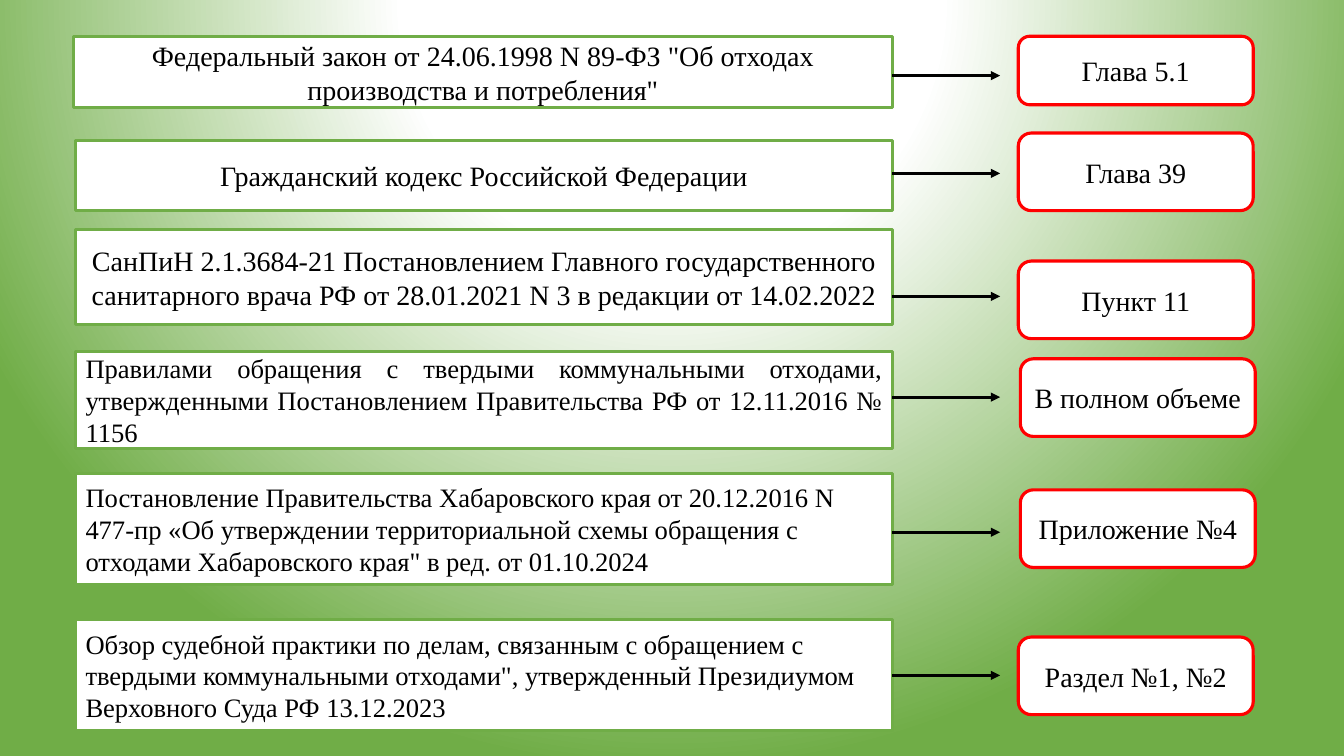
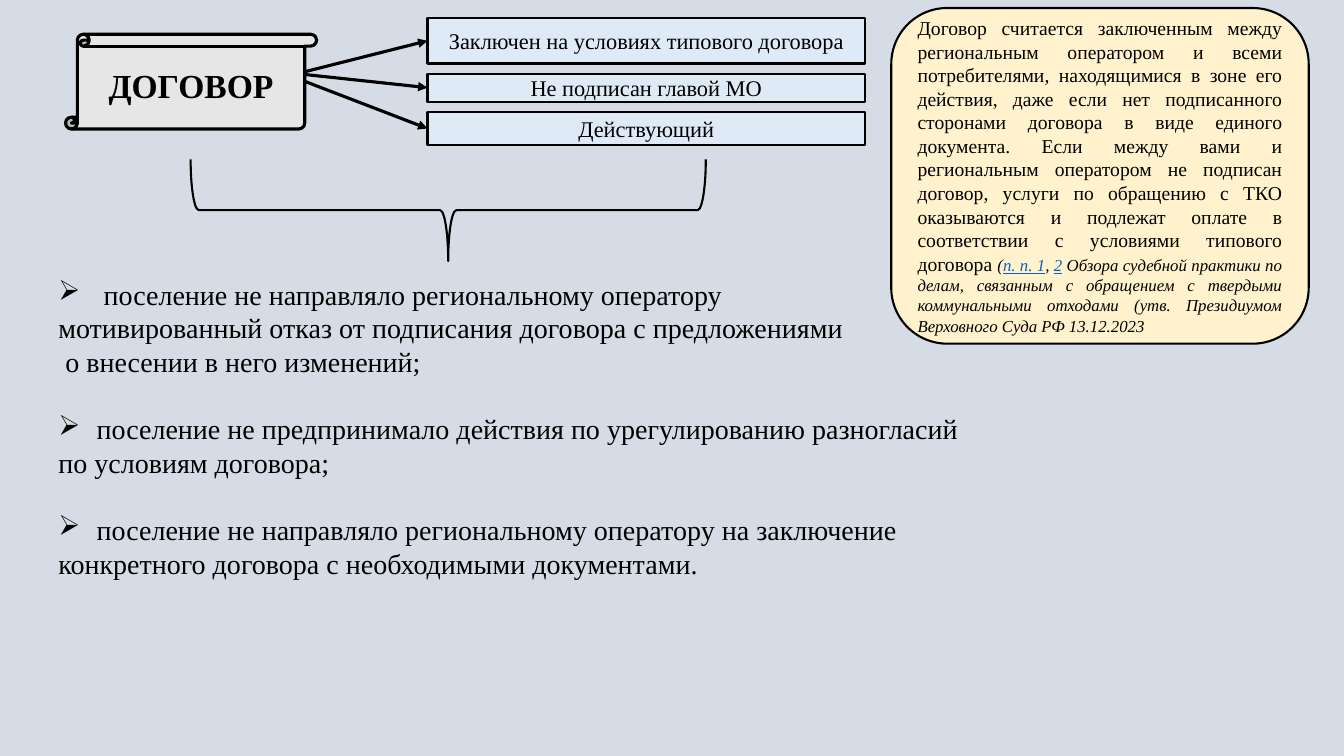
import dataclasses

import lxml.etree
import pptx
import pptx.dml.color
import pptx.enum.shapes
import pptx.enum.text
import pptx.oxml
import pptx.oxml.ns
import pptx.util

Inches = pptx.util.Inches
Shape = pptx.enum.shapes.MSO_SHAPE
Align = pptx.enum.text.PP_ALIGN


@dataclasses.dataclass(frozen=True)
class Theme:
    font: str = "Times New Roman"
    black: str = "000000"
    white: str = "FFFFFF"
    green: str = "70AD47"
    red: str = "FF0000"
    slate: str = "D6DCE5"
    gray: str = "E7E6E6"
    blue: str = "DEEBF7"
    cream: str = "FFF2CC"
    link: str = "0563C1"
    heading: int = 24
    body: int = 20
    dense: int = 19
    label: int = 16
    note: int = 14
    citation: int = 12
    thick: float = 2.25
    thin: float = 1.5
    paragraph_gap: int = 24


THEME = Theme()

LAW_RIGHT = 8.85
ARROW_RIGHT = 9.92
REFERENCE_WIDTH = 2.33

LAWS = [
    ('Федеральный закон от 24.06.1998 N 89-ФЗ "Об отходах производства и потребления"',
     (0.73, 0.36, 0.71), THEME.body, Align.CENTER, 0.75, "Глава 5.1", (10.1, 0.36, 0.68)),
    ("Гражданский кодекс Российской Федерации",
     (0.75, 1.39, 0.7), THEME.body, Align.CENTER, 1.72, "Глава 39", (10.1, 1.32, 0.77)),
    ("СанПиН 2.1.3684-21 Постановлением Главного государственного санитарного врача РФ "
     "от 28.01.2021 N 3 в редакции от 14.02.2022",
     (0.75, 2.28, 0.94), THEME.body, Align.CENTER, 2.94, "Пункт 11", (10.1, 2.59, 0.77)),
    ("Правилами обращения с твердыми коммунальными отходами, утвержденными "
     "Постановлением Правительства РФ от 12.11.2016 № 1156",
     (0.75, 3.49, 0.96), THEME.dense, Align.JUSTIFY, 3.94, "В полном объеме", (10.12, 3.56, 0.77)),
    ("Постановление Правительства Хабаровского края от 20.12.2016 N 477-пр «Об утверждении "
     'территориальной схемы обращения с отходами Хабаровского края" в ред. от 01.10.2024',
     (0.75, 4.7, 1.1), THEME.dense, Align.LEFT, 5.28, "Приложение №4", (10.12, 4.86, 0.77)),
    ("Обзор судебной практики по делам, связанным с обращением с твердыми коммунальными "
     'отходами", утвержденный Президиумом Верховного Суда РФ 13.12.2023',
     (0.75, 6.15, 1.1), THEME.dense, Align.LEFT, 6.7, "Раздел №1, №2", (10.1, 6.32, 0.77)),
]

CONTRACT_STATES = [
    ("Заключен на условиях типового договора", 0.18, 0.45, 0.71),
    ("Не подписан главой МО", 0.73, 0.28, 0.74),
    ("Действующий", 1.11, 0.33, 0.81),
]

CONDITIONS = [
    [" поселение не направляло региональному оператору",
     "мотивированный отказ от подписания договора с предложениями",
     " о внесении в него изменений;"],
    ["поселение не предпринимало действия по урегулированию разногласий",
     "по условиям договора;"],
    ["поселение не направляло региональному оператору на заключение",
     "конкретного договора с необходимыми документами."],
]

EXPLANATION = (
    "Договор считается заключенным между региональным оператором и всеми потребителями, "
    "находящимися в зоне его действия, даже если нет подписанного сторонами договора в виде "
    "единого документа. Если между вами и региональным оператором не подписан договор, услуги "
    "по обращению с ТКО оказываются и подлежат оплате в соответствии с условиями типового договора "
)
CITATION = [
    ("(", False),
    ("п. п. 1", True),
    (", ", False),
    ("2", True),
    (" Обзора судебной практики по делам, связанным с обращением с твердыми коммунальными "
     "отходами (утв. Президиумом Верховного Суда РФ 13.12.2023", False),
]


def rgb(color):
    return pptx.dml.color.RGBColor.from_string(color)


def add_run(paragraph, text, size, color=THEME.black, bold=None, italic=None, underline=None):
    run = paragraph.add_run()
    run.text = text
    font = run.font
    font.name, font.size = THEME.font, pptx.util.Pt(size)
    font.color.rgb = rgb(color)
    font.bold, font.italic, font.underline = bold, italic, underline


def add_outline(slide, kind, box, line, width, fill=None):
    shape = slide.shapes.add_shape(kind, *map(Inches, box))
    shape.shadow.inherit = False
    if fill:
        shape.fill.solid()
        shape.fill.fore_color.rgb = rgb(fill)
    else:
        shape.fill.background()
    shape.line.color.rgb = rgb(line)
    shape.line.width = pptx.util.Pt(width)
    return shape


def start_text(shape, alignment):
    shape.text_frame.word_wrap = True
    shape.text_frame.vertical_anchor = pptx.enum.text.MSO_ANCHOR.MIDDLE
    paragraph = shape.text_frame.paragraphs[0]
    paragraph.alignment = alignment
    return paragraph


def add_label(slide, kind, box, text, size, fill, line, width, alignment=Align.CENTER, bold=None):
    shape = add_outline(slide, kind, box, line, width, fill)
    add_run(start_text(shape, alignment), text, size, bold=bold)
    return shape


def add_arrow(slide, start, end):
    arrow = slide.shapes.add_connector(
        pptx.enum.shapes.MSO_CONNECTOR.STRAIGHT, *map(Inches, start + end))
    arrow.line.color.rgb = rgb(THEME.black)
    arrow.line.width = pptx.util.Pt(THEME.thick)
    tail = pptx.oxml.ns.qn("a:tailEnd")
    lxml.etree.SubElement(arrow.line._get_or_add_ln(), tail).set("type", "triangle")
    properties = arrow.element.find(pptx.oxml.ns.qn("p:spPr"))
    lxml.etree.SubElement(properties, pptx.oxml.ns.qn("a:effectLst"))
    return arrow


def set_glow_background(slide):
    slide.background.fill.gradient()
    gradient = slide.element.find(".//" + pptx.oxml.ns.qn("a:gradFill"))
    stops = "".join(
        f'<a:gs pos="{position * 1000}"><a:srgbClr val="{color}"/></a:gs>'
        for position, color in ((0, THEME.white), (35, THEME.white), (100, THEME.green)))
    glow = pptx.oxml.parse_xml(
        f'<a:gradFill {pptx.oxml.ns.nsdecls("a")} rotWithShape="1"><a:gsLst>{stops}</a:gsLst>'
        '<a:path path="circle"><a:fillToRect l="50000" t="-80000" r="50000" b="180000"/></a:path>'
        "</a:gradFill>")
    gradient.getparent().replace(gradient, glow)


def set_bullet(paragraph):
    properties = paragraph._p.get_or_add_pPr()
    indent = Inches(0.38)
    properties.set("marL", str(indent))
    properties.set("indent", str(-indent))
    lxml.etree.SubElement(properties, pptx.oxml.ns.qn("a:buChar")).set("char", "➢")


def add_conditions(slide, box):
    frame = slide.shapes.add_textbox(*map(Inches, box)).text_frame
    frame.word_wrap = True
    paragraph = frame.paragraphs[0]
    for item, lines in enumerate(CONDITIONS):
        for position, line in enumerate(lines):
            if item or position:
                paragraph = frame.add_paragraph()
            if position == 0:
                if item:
                    paragraph.space_before = pptx.util.Pt(THEME.paragraph_gap)
                set_bullet(paragraph)
            add_run(paragraph, line, THEME.body)


def add_explanation(slide, box):
    shape = add_outline(slide, Shape.ROUNDED_RECTANGLE, box, THEME.black, THEME.thin, THEME.cream)
    paragraph = start_text(shape, Align.JUSTIFY)
    add_run(paragraph, EXPLANATION, THEME.note)
    for text, is_link in CITATION:
        add_run(paragraph, text, THEME.citation, THEME.link if is_link else THEME.black,
                italic=True, underline=is_link)


def build_laws_slide(slide):
    set_glow_background(slide)
    for law, law_box, size, alignment, arrow_y, reference, reference_box in LAWS:
        left, top, height = law_box
        law_shape = add_label(slide, Shape.RECTANGLE, (left, top, LAW_RIGHT - left, height), law,
                              size, THEME.white, THEME.green, THEME.thick, alignment)
        arrow = add_arrow(slide, (LAW_RIGHT, arrow_y), (ARROW_RIGHT, arrow_y))
        if abs(top + height / 2 - arrow_y) < 0.01:
            arrow.begin_connect(law_shape, 3)
        left, top, height = reference_box
        add_label(slide, Shape.ROUNDED_RECTANGLE, (left, top, REFERENCE_WIDTH, height), reference,
                  THEME.body, THEME.white, THEME.red, THEME.thick)


def build_contract_slide(slide):
    slide.background.fill.solid()
    slide.background.fill.fore_color.rgb = rgb(THEME.slate)
    add_label(slide, Shape.VERTICAL_SCROLL, (0.65, 0.34, 2.49, 0.94), "ДОГОВОР",
              THEME.heading, THEME.gray, THEME.black, THEME.thick, bold=True)
    state_left = 4.24
    for text, top, height, arrow_y in CONTRACT_STATES:
        state = add_label(slide, Shape.RECTANGLE, (state_left, top, 4.34, height), text,
                          THEME.label, THEME.blue, THEME.black, THEME.thin)
        arrow = add_arrow(slide, (3.03, arrow_y), (state_left, top + height / 2))
        arrow.end_connect(state, 1)
    add_explanation(slide, (8.84, 0.08, 4.14, 3.33))
    add_conditions(slide, (0.48, 2.7, 9.21, 3.13))
    brace = add_outline(slide, Shape.RIGHT_BRACE, (3.94, -0.47, 1.01, 5.11),
                        THEME.black, THEME.thin)
    brace.rotation = 90
    brace.adjustments[0] = 0.08
    brace.adjustments[1] = 0.5


def main():
    presentation = pptx.Presentation()
    presentation.slide_width = Inches(13.33)
    presentation.slide_height = Inches(7.5)
    blank = presentation.slide_layouts[6]
    for build in (build_laws_slide, build_contract_slide):
        build(presentation.slides.add_slide(blank))
    presentation.save("out.pptx")


if __name__ == "__main__":
    main()
